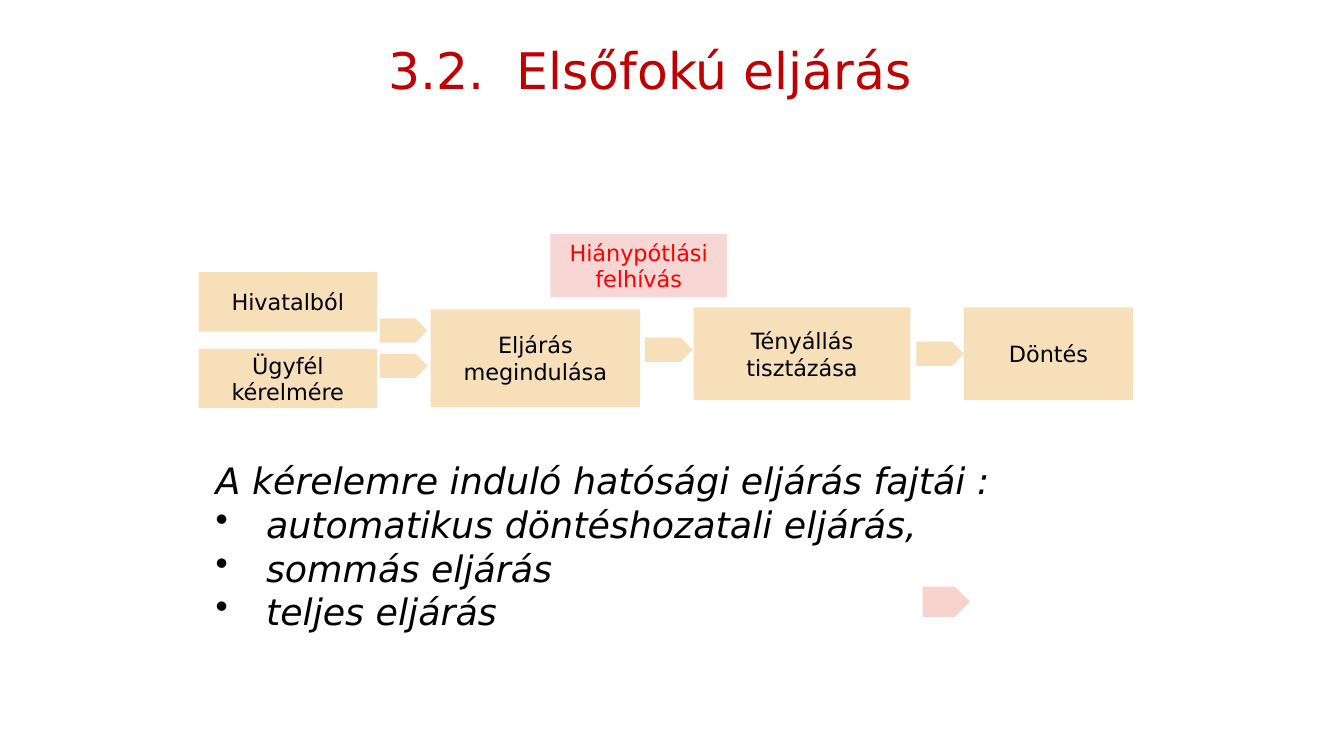
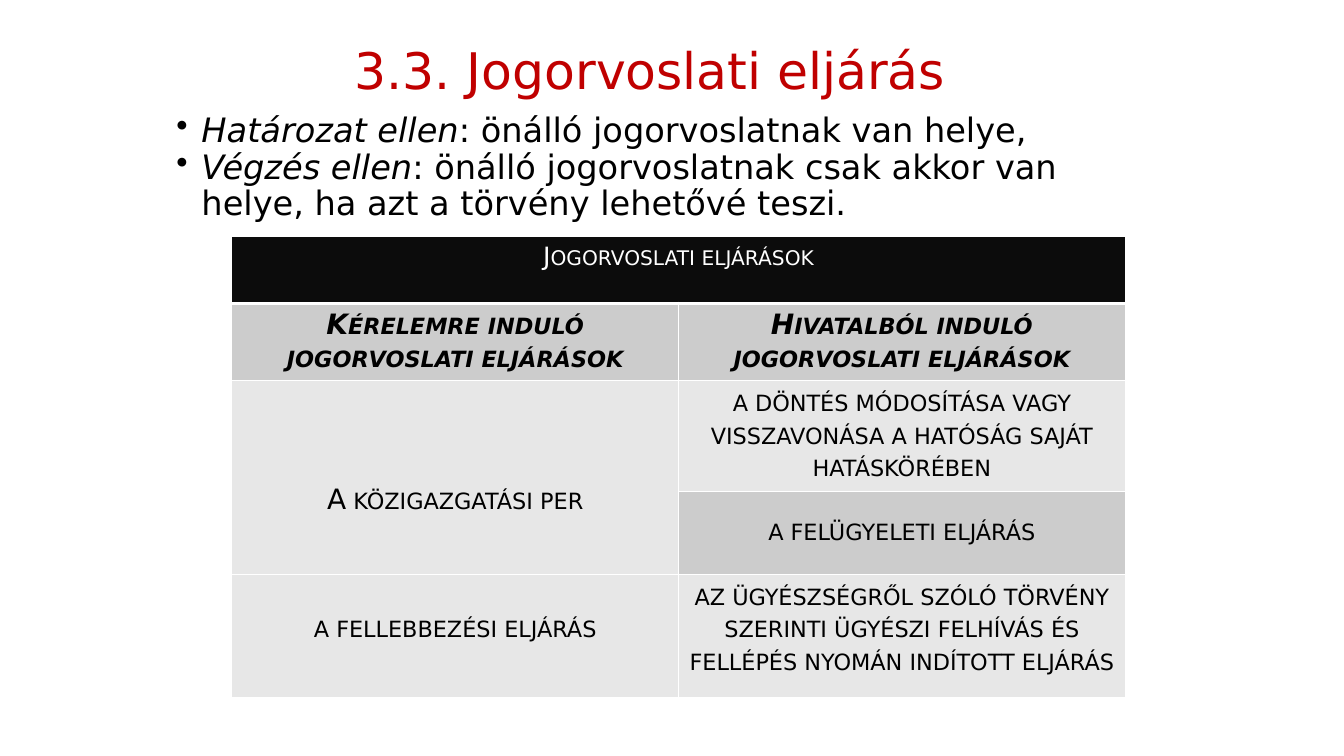
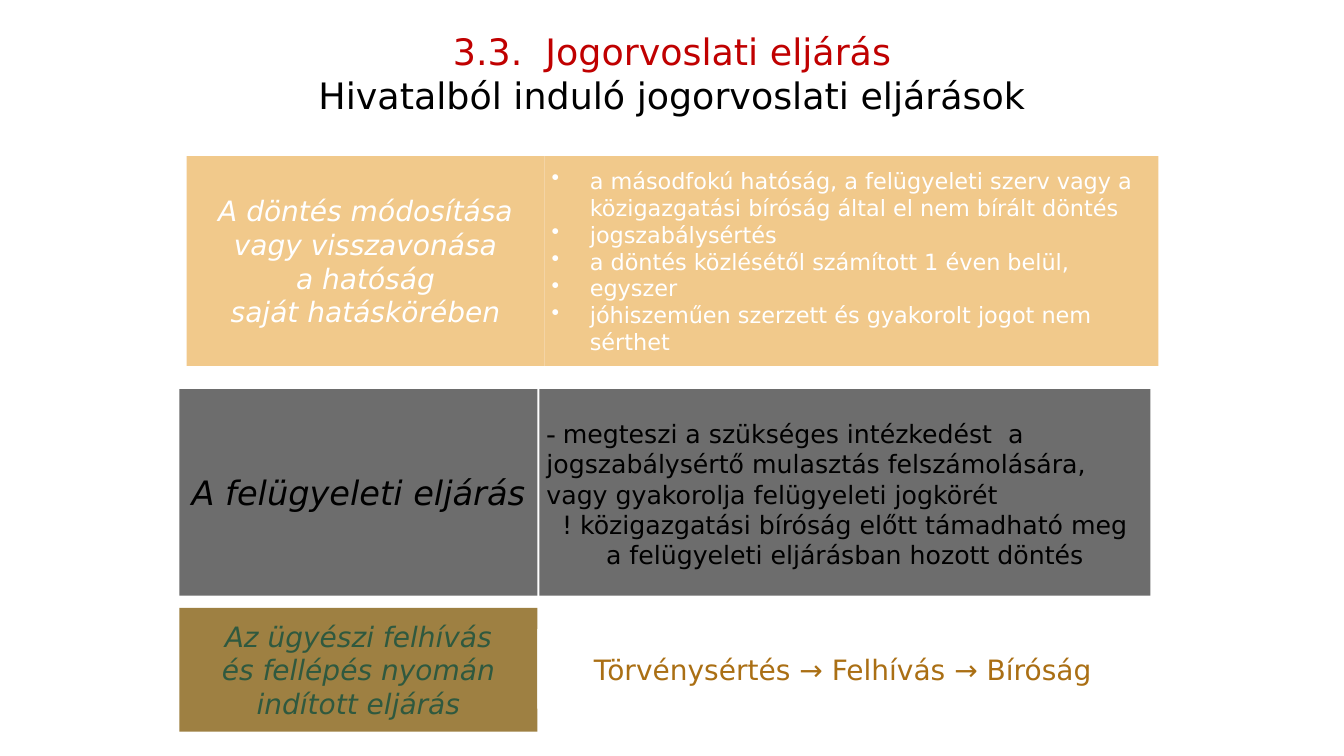
from dataclasses import dataclass, replace

from lxml import etree
from pptx import Presentation
from pptx import util as u
from pptx.dml import color
from pptx.enum import shapes, text
from pptx.oxml import ns

COLORS = {
    "title": "C00000", "black": "000000", "white": "FFFFFF",
    "sand": "F7DFB9", "blush": "F7D6D4", "rose": "F8D2CC", "alert": "FF0000",
    "apricot": "F1C98B", "slate": "6D6D6D", "bronze": "9E8042",
    "forest": "2F593F", "amber": "AA6F14",
    "header": "0C0C0C", "band": "CCCCCC", "pale": "E7E7E7",
}
LEFT, CENTER = text.PP_ALIGN.LEFT, text.PP_ALIGN.CENTER
TOP, MIDDLE = text.MSO_ANCHOR.TOP, text.MSO_ANCHOR.MIDDLE
RECTANGLE, PENTAGON = shapes.MSO_SHAPE.RECTANGLE, shapes.MSO_SHAPE.PENTAGON
WIDE_INSETS, TIGHT_INSETS = (0.1, 0.05), (0.07, 0.04)


@dataclass(frozen=True)
class Style:
    size: float
    color: str = "black"
    italic: bool = False
    bold: bool = False
    small_caps: bool = False
    font: str = "DejaVu Sans"


@dataclass(frozen=True)
class Piece:
    text: str
    style: Style


@dataclass(frozen=True)
class Line:
    pieces: tuple[Piece, ...]
    align: text.PP_ALIGN = CENTER
    indent: float = 0
    spacing: float = 1.0


@dataclass(frozen=True)
class Area:
    left: float
    top: float
    width: float
    height: float

    def lengths(self) -> tuple[u.Length, ...]:
        return tuple(u.Inches(n) for n in (self.left, self.top, self.width, self.height))


@dataclass(frozen=True)
class Card:
    area: Area
    fill: str
    lines: list[Line]
    insets: tuple[float, float] = WIDE_INSETS


@dataclass(frozen=True)
class TableCell:
    row: int
    column: int
    fill: str
    lines: list[Line]
    offset: float = 0.05
    last_row: int = 0
    last_column: int = 0


def rgb(name: str) -> color.RGBColor:
    return color.RGBColor.from_string(COLORS[name])


def plain(style: Style, *texts: str, align=CENTER, indent: float = 0) -> list[Line]:
    return [Line((Piece(content, style),), align, indent) for content in texts]


def add_bullet(paragraph, indent: float) -> None:
    properties = paragraph._p.get_or_add_pPr()
    properties.set("marL", str(u.Inches(indent)))
    properties.set("indent", str(-u.Inches(indent)))
    etree.SubElement(properties, ns.qn("a:buChar")).set("char", "•")


def format_run(run, style: Style) -> None:
    font = run.font
    font.name, font.size = style.font, u.Pt(style.size)
    font.italic, font.bold = style.italic, style.bold
    font.color.rgb = rgb(style.color)
    if style.small_caps:
        run._r.get_or_add_rPr().set("cap", "small")


def write_lines(frame, lines: list[Line]) -> None:
    for index, line in enumerate(lines):
        paragraph = frame.add_paragraph() if index else frame.paragraphs[0]
        if line.indent:
            add_bullet(paragraph, line.indent)
        paragraph.alignment = line.align
        paragraph.line_spacing = line.spacing
        paragraph.text = line.pieces[0].text
        for piece in line.pieces[1:]:
            paragraph.add_run().text = piece.text
        for run, piece in zip(paragraph.runs, line.pieces):
            format_run(run, piece.style)


def fill_frame(frame, lines: list[Line], anchor, insets=WIDE_INSETS) -> None:
    frame.word_wrap = True
    frame.vertical_anchor = anchor
    frame.margin_left = frame.margin_right = u.Inches(insets[0])
    frame.margin_top = frame.margin_bottom = u.Inches(insets[1])
    write_lines(frame, lines)


def add_text(slide, area: Area, lines: list[Line]) -> None:
    fill_frame(slide.shapes.add_textbox(*area.lengths()).text_frame, lines, TOP)


def add_title(slide, title: str) -> None:
    add_text(slide, Area(2.16, 0.34, 8.58, 0.7), plain(Style(36, "title"), title))


def add_block(slide, kind, area: Area, fill: str):
    shape = slide.shapes.add_shape(kind, *area.lengths())
    shape.shadow.inherit = False
    shape.fill.solid()
    shape.fill.fore_color.rgb = rgb(fill)
    shape.line.fill.background()
    return shape


def add_cards(slide, cards: list[Card]) -> None:
    for card in cards:
        shape = add_block(slide, RECTANGLE, card.area, card.fill)
        fill_frame(shape.text_frame, card.lines, MIDDLE, card.insets)


def set_borders(cell, header: bool) -> None:
    properties = cell._tc.get_or_add_tcPr()
    for side in ("lnL", "lnR", "lnT", "lnB"):
        border = etree.SubElement(properties, ns.qn(f"a:{side}"))
        border.set("w", str(u.Pt(3 if header and side == "lnB" else 1)))
        fill = etree.SubElement(border, ns.qn("a:solidFill"))
        etree.SubElement(fill, ns.qn("a:srgbClr")).set("val", COLORS["white"])


def add_grid(slide, area: Area, heights: list[float], columns: int, cells: list[TableCell]) -> None:
    table = slide.shapes.add_table(len(heights), columns, *area.lengths()).table
    for row, height in zip(table.rows, heights):
        row.height = u.Inches(height)
    for column in table.columns:
        column.width = u.Inches(area.width / columns)
    for row in range(len(heights)):
        for column in range(columns):
            set_borders(table.cell(row, column), row == 0)
    for item in cells:
        cell = table.cell(item.row, item.column)
        last_row, last_column = max(item.row, item.last_row), max(item.column, item.last_column)
        if (last_row, last_column) != (item.row, item.column):
            cell.merge(table.cell(last_row, last_column))
        cell.fill.solid()
        cell.fill.fore_color.rgb = rgb(item.fill)
        cell.vertical_anchor = TOP
        cell.margin_left = cell.margin_right = u.Inches(0.07)
        cell.margin_top, cell.margin_bottom = u.Inches(item.offset), u.Inches(0.05)
        write_lines(cell.text_frame, item.lines)


def build_first_instance(slide) -> None:
    label = Style(16)
    steps = [
        (Area(1.97, 3.46, 1.77, 0.59), "Ügyfél kérelmére"),
        (Area(1.97, 2.7, 1.77, 0.59), "Hivatalból"),
        (Area(4.27, 3.07, 2.08, 0.97), "Eljárás megindulása"),
        (Area(6.88, 3.05, 2.15, 0.92), "Tényállás tisztázása"),
        (Area(9.56, 3.05, 1.68, 0.92), "Döntés"),
    ]
    add_cards(slide, [Card(area, "sand", plain(label, name)) for area, name in steps])
    notice = plain(replace(label, color="alert"), "Hiánypótlási felhívás")
    add_cards(slide, [Card(Area(5.46, 2.32, 1.75, 0.63), "blush", notice)])
    for left, top in ((6.4, 3.35), (9.09, 3.39), (3.77, 3.16), (3.77, 3.51)):
        add_block(slide, PENTAGON, Area(left, top, 0.47, 0.24), "sand")
    add_block(slide, PENTAGON, Area(9.15, 5.82, 0.47, 0.3), "rose")

    body = Style(26, italic=True)
    kinds = ("automatikus döntéshozatali eljárás,", "sommás eljárás", "teljes eljárás")
    add_text(slide, Area(2.04, 4.5, 8.72, 1.85),
             plain(body, "A kérelemre induló hatósági eljárás fajtái :", align=LEFT)
             + plain(body, *kinds, align=LEFT, indent=0.5))
    add_title(slide, "3.2.  Elsőfokú eljárás")


def build_remedies(slide) -> None:
    body = Style(24)
    rules = [
        ("Határozat ellen", ": önálló jogorvoslatnak van helye,"),
        ("Végzés ellen", ": önálló jogorvoslatnak csak akkor van helye, ha azt a törvény lehetővé teszi."),
    ]
    add_text(slide, Area(1.65, 1.08, 10.01, 1.2), [
        Line((Piece(lead, replace(body, italic=True)), Piece(rest, body)), LEFT, 0.25, 0.9)
        for lead, rest in rules
    ])

    entry = Style(20, small_caps=True)
    heading = replace(entry, bold=True, italic=True)
    top_row = replace(entry, size=18, color="white")
    second = "jogorvoslati eljárások"
    add_grid(slide, Area(2.3, 2.35, 8.86, 4.52), [0.66, 0.75, 1.07, 0.82, 1.22], 2, [
        TableCell(0, 0, "header", plain(top_row, "Jogorvoslati eljárások"), last_column=1),
        TableCell(1, 0, "band", plain(heading, "Kérelemre induló", second)),
        TableCell(1, 1, "band", plain(heading, "Hivatalból induló", second)),
        TableCell(2, 0, "pale", plain(entry, "A közigazgatási per"), 1.02, last_row=3),
        TableCell(2, 1, "pale", plain(
            entry, "a döntés módosítása vagy visszavonása a hatóság saját hatáskörében")),
        TableCell(3, 1, "band", plain(entry, "a felügyeleti eljárás"), 0.23),
        TableCell(4, 0, "pale", plain(entry, "a fellebbezési eljárás"), 0.37),
        TableCell(4, 1, "pale", plain(
            entry, "az ügyészségről szóló törvény szerinti ügyészi felhívás "
            "és fellépés nyomán indított eljárás")),
    ])
    add_title(slide, "3.3. Jogorvoslati eljárás")


def build_ex_officio(slide) -> None:
    name = Style(20, italic=True)
    detail = Style(18)
    supervision = [
        Line((Piece("- ", Style(20, font="Times New Roman")),
              Piece("megteszi a szükséges intézkedést  a jogszabálysértő mulasztás "
                    "felszámolására, vagy gyakorolja felügyeleti jogkörét", detail)), LEFT),
        *plain(detail, "! közigazgatási bíróság előtt támadható meg",
               "a felügyeleti eljárásban hozott döntés"),
    ]
    conditions = plain(
        Style(16, "white"),
        "a másodfokú hatóság, a felügyeleti szerv vagy a közigazgatási bíróság által el nem bírált döntés",
        "jogszabálysértés",
        "a döntés közlésétől számított 1 éven belül,",
        "egyszer",
        "jóhiszeműen szerzett és gyakorolt jogot nem sérthet",
        align=LEFT, indent=0.38)
    add_cards(slide, [
        Card(Area(1.78, 6.03, 3.55, 1.23), "bronze", plain(
            replace(name, color="forest"),
            "Az ügyészi felhívás", "és fellépés nyomán", "indított eljárás"), TIGHT_INSETS),
        Card(Area(5.33, 6.24, 6.06, 0.79), "white", plain(
            Style(20, "amber"), "Törvénysértés → Felhívás → Bíróság")),
        Card(Area(1.78, 3.86, 3.55, 2.05), "slate", plain(
            replace(name, size=24), "A felügyeleti eljárás"), TIGHT_INSETS),
        Card(Area(5.35, 3.86, 6.06, 2.05), "slate", supervision, TIGHT_INSETS),
        Card(Area(1.85, 1.55, 3.55, 2.08), "apricot", plain(
            replace(name, color="white"), "A döntés módosítása", "vagy visszavonása",
            "a hatóság", "saját hatáskörében"), TIGHT_INSETS),
        Card(Area(5.4, 1.55, 6.09, 2.08), "apricot", conditions, TIGHT_INSETS),
    ])
    add_text(slide, Area(1.67, 0.24, 10, 0.98),
             plain(Style(26, "title"), "3.3.  Jogorvoslati eljárás")
             + plain(Style(26), "Hivatalból induló jogorvoslati eljárások"))


def main() -> None:
    presentation = Presentation()
    presentation.slide_width = u.Inches(13.33)
    presentation.slide_height = u.Inches(7.5)
    blank = presentation.slide_layouts[6]
    for build in (build_first_instance, build_remedies, build_ex_officio):
        build(presentation.slides.add_slide(blank))
    presentation.save("out.pptx")


if __name__ == "__main__":
    main()
